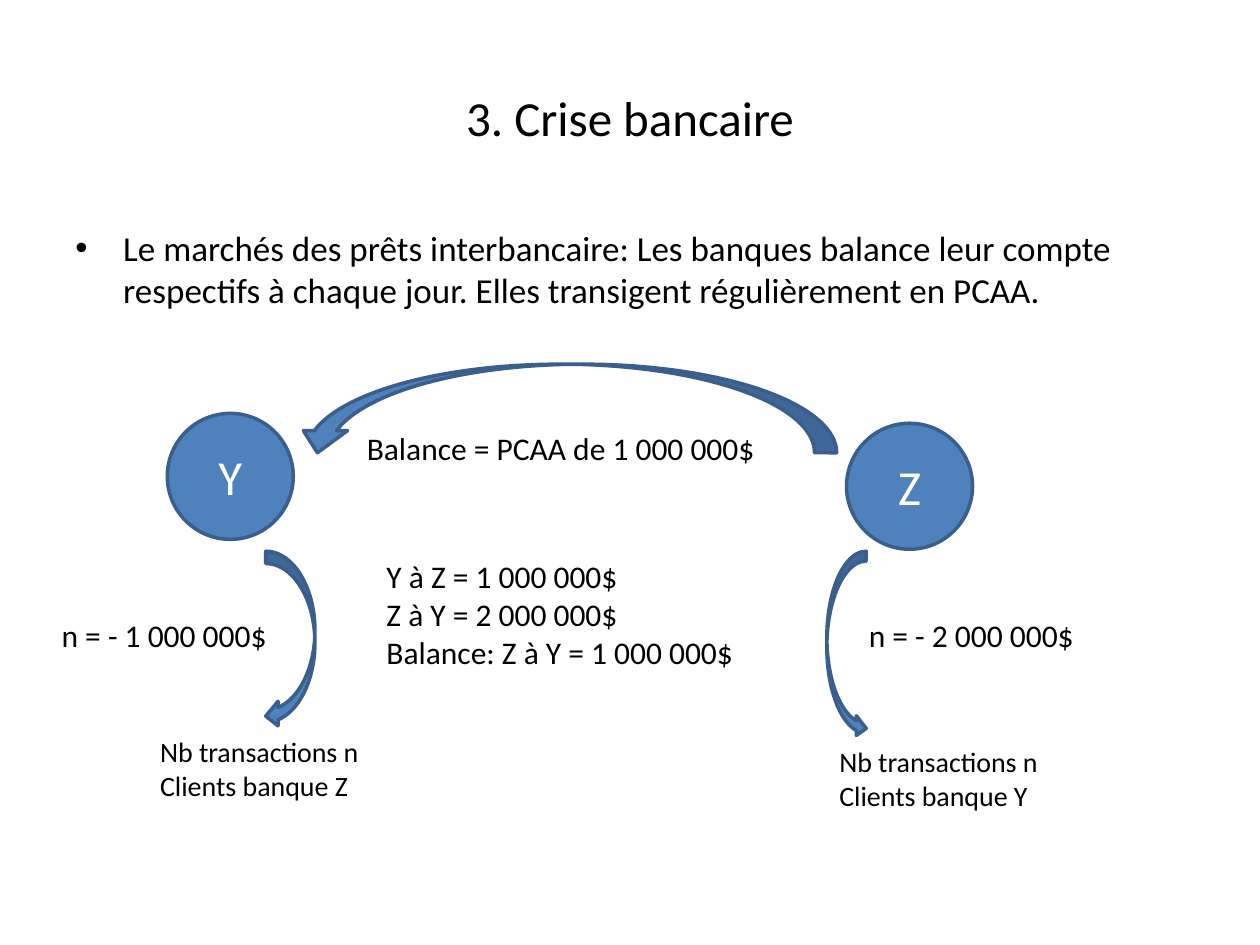
from dataclasses import dataclass

from lxml import etree
from pptx import Presentation
from pptx.dml.color import RGBColor
from pptx.enum.shapes import MSO_SHAPE
from pptx.enum.text import MSO_ANCHOR, PP_ALIGN
from pptx.oxml.ns import qn
from pptx.util import Inches, Pt

TOP, MIDDLE = MSO_ANCHOR.TOP, MSO_ANCHOR.MIDDLE
LEFT, CENTER = PP_ALIGN.LEFT, PP_ALIGN.CENTER
OVAL = MSO_SHAPE.OVAL
CURVED_LEFT = MSO_SHAPE.CURVED_LEFT_ARROW
CURVED_RIGHT = MSO_SHAPE.CURVED_RIGHT_ARROW
CURVED_DOWN = MSO_SHAPE.CURVED_DOWN_ARROW

WIDTH, HEIGHT = Inches(10), Inches(7.5)
COLUMNS, ROWS = 64, 48
FONT = "Calibri"
COLORS = {"text": "000000", "bank": "4F81BD", "edge": "3A5F8C", "initial": "FFFFFF"}


@dataclass(frozen=True)
class Cell:
    column: float
    row: float
    columns: float
    rows: float

    def box(self) -> tuple[int, int, int, int]:
        across, down = WIDTH / COLUMNS, HEIGHT / ROWS
        return (round(self.column * across), round(self.row * down),
                round(self.columns * across), round(self.rows * down))


@dataclass(frozen=True)
class Label:
    cell: Cell
    lines: tuple[str, ...]
    size: int = 18
    align: PP_ALIGN = LEFT
    anchor: MSO_ANCHOR = TOP
    bullet: bool = False


@dataclass(frozen=True)
class Figure:
    cell: Cell
    preset: MSO_SHAPE
    initial: str = ""
    mirrored: bool = False


def write(frame, lines: tuple[str, ...], size: int, color: str,
          align: PP_ALIGN, anchor: MSO_ANCHOR) -> None:
    frame.word_wrap = True
    frame.vertical_anchor = anchor
    for index, line in enumerate(lines):
        paragraph = frame.add_paragraph() if index else frame.paragraphs[0]
        paragraph.alignment = align
        run = paragraph.add_run()
        run.text = line
        formats = {"name": FONT, "size": Pt(size)}
        for attribute, value in formats.items():
            setattr(run.font, attribute, value)
        run.font.color.rgb = RGBColor.from_string(COLORS[color])


def add_bullet(paragraph) -> None:
    paragraph.space_before = Pt(size_share := 4)
    properties = paragraph._p.get_or_add_pPr()
    indent = Inches(0.38)
    for attribute, value in {"marL": indent, "indent": -indent}.items():
        properties.set(attribute, str(value))
    etree.SubElement(properties, qn("a:buFont")).set("typeface", "Arial")
    etree.SubElement(properties, qn("a:buChar")).set("char", "•")


def draw_label(slide, label: Label) -> None:
    frame = slide.shapes.add_textbox(*label.cell.box()).text_frame
    write(frame, label.lines, label.size, "text", label.align, label.anchor)
    if label.bullet:
        add_bullet(frame.paragraphs[0])


def draw_figure(slide, figure: Figure) -> None:
    shape = slide.shapes.add_shape(figure.preset, *figure.cell.box())
    shape.shadow.inherit = False
    shape.fill.solid()
    shape.fill.fore_color.rgb = RGBColor.from_string(COLORS["bank"])
    shape.line.color.rgb = RGBColor.from_string(COLORS["edge"])
    shape.line.width = Pt(2)
    if figure.mirrored:
        shape._element.spPr.xfrm.set("flipH", "1")
    if figure.initial:
        write(shape.text_frame, (figure.initial,), 28, "initial", CENTER, MIDDLE)


LABELS = (
    Label(Cell(3.2, 1.92, 57.6, 8), ("3. Crise bancaire",), 28, CENTER, MIDDLE),
    Label(Cell(3.2, 11.2, 57.6, 31.68),
          ("Le marchés des prêts interbancaire: Les banques balance leur compte "
           "respectifs à chaque jour. Elles transigent régulièrement en PCAA.",),
          20, bullet=True),
    Label(Cell(7.5, 37, 12.5, 4.1), ("Nb transactions n", "Clients banque Z"), 16),
    Label(Cell(42, 37.5, 12.5, 4.1), ("Nb transactions n", "Clients banque Y"), 16),
    Label(Cell(2.5, 31, 12, 2.6), ("n = - 1 000 000$",)),
    Label(Cell(43.5, 31, 12, 2.6), ("n = - 2 000 000$",)),
    Label(Cell(19, 28, 21, 6.5),
          ("Y à Z = 1 000 000$", "Z à Y = 2 000 000$", "Balance: Z à Y = 1 000 000$")),
    Label(Cell(18, 21.5, 22, 2.6), ("Balance = PCAA de 1 000 000$",)),
)

FIGURES = (
    Figure(Cell(8.5, 21, 6.4, 6.4), OVAL, "Y"),
    Figure(Cell(43, 21.5, 6.4, 6.4), OVAL, "Z"),
    Figure(Cell(13.5, 28, 2.5, 9), CURVED_LEFT),
    Figure(Cell(42, 28, 2, 9.5), CURVED_RIGHT),
    Figure(Cell(15, 18.5, 27.5, 4.5), CURVED_DOWN, mirrored=True),
)


def main() -> None:
    deck = Presentation()
    deck.slide_width, deck.slide_height = WIDTH, HEIGHT
    slide = deck.slides.add_slide(deck.slide_layouts[6])
    for figure in FIGURES:
        draw_figure(slide, figure)
    for label in LABELS:
        draw_label(slide, label)
    deck.save("out.pptx")


if __name__ == "__main__":
    main()
